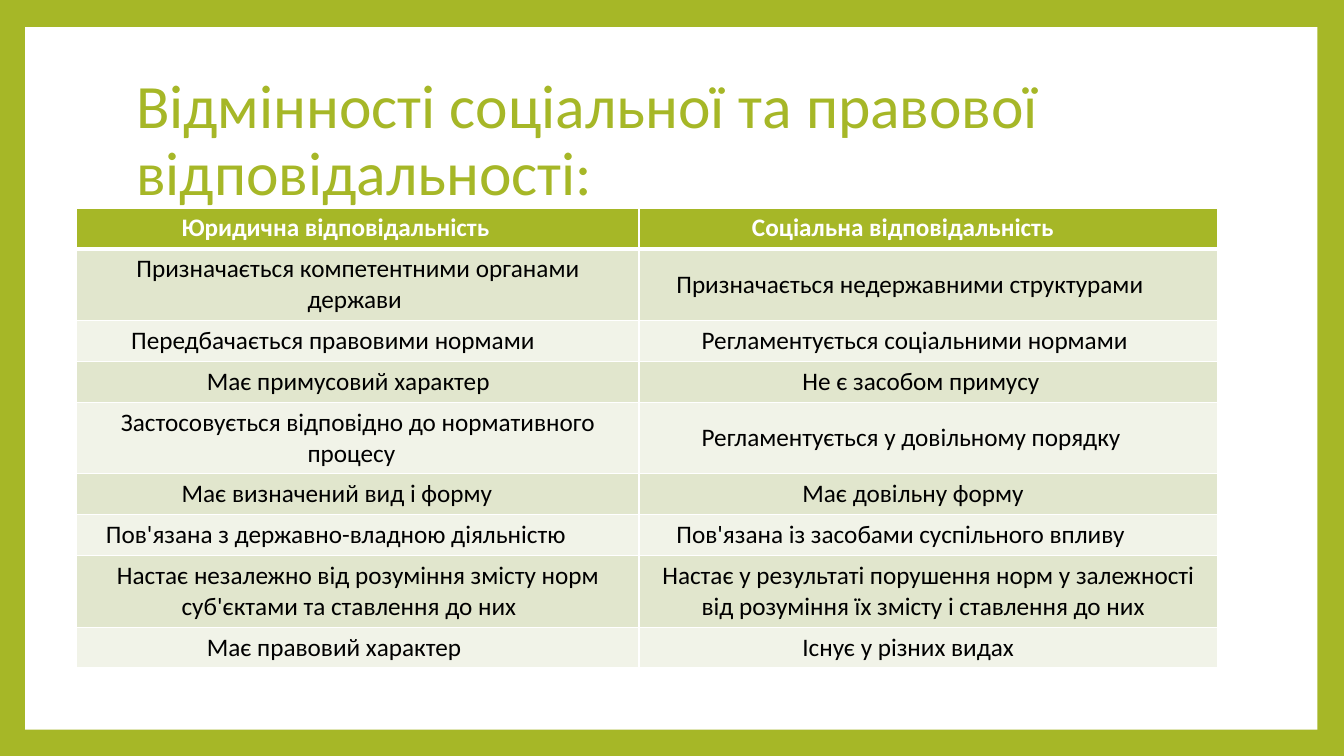
from lxml import etree
from pptx import Presentation
from pptx.dml.color import RGBColor
from pptx.enum import shapes, text
from pptx.oxml.ns import qn
from pptx.util import Pt

TITLE = "Відмінності соціальної та правової відповідальності:"
ROWS = [
    ("Юридична відповідальність", "Соціальна відповідальність"),
    ("Призначається компетентними органами держави",
     "Призначається недержавними структурами"),
    ("Передбачається правовими нормами", "Регламентується соціальними нормами"),
    ("Має примусовий характер", "Не є засобом примусу"),
    ("Застосовується відповідно до нормативного процесу",
     "Регламентується у довільному порядку"),
    ("Maє визначений вид і форму", "Має довільну форму"),
    ("Пов'язана з державно-владною діяльністю",
     "Пов'язана із засобами суспільного впливу"),
    ("Настає незалежно від розуміння змісту норм суб'єктами та ставлення до них",
     "Настає у результаті порушення норм у залежності від розуміння їх змісту "
     "і ставлення до них"),
    ("Має правовий характер", "Існує у різних видах"),
]
COLORS = {"green": "A6B727", "white": "FFFFFF", "black": "000000",
          "odd": "E1E6CD", "even": "F1F3E8"}
PANEL = (18, 19.4, 923, 501.8)
HEAD = (90, 48.2, 777.6, 106.6)
GRID = (54.9, 148.5)
COLS = (401.6, 413.3)
ROW_H = 29.2
FONT = "Calibri"


def color(name):
    return RGBColor.from_string(COLORS[name])


def paint(fill, name):
    fill.solid()
    fill.fore_color.rgb = color(name)


def style(font, size, name, bold=False):
    for key, val in {"name": FONT, "size": Pt(size), "bold": bold}.items():
        setattr(font, key, val)
    font.color.rgb = color(name)


def edge(cell, top, bottom):
    """Give the cell white borders, 1 pt at the sides."""
    props = cell._tc.get_or_add_tcPr()
    sides = {"lnL": 1, "lnR": 1, "lnT": top, "lnB": bottom}
    for i, (tag, width) in enumerate(sides.items()):
        line = etree.Element(qn("a:" + tag), w=str(Pt(width)))
        solid = etree.SubElement(line, qn("a:solidFill"))
        etree.SubElement(solid, qn("a:srgbClr"), val=COLORS["white"])
        props.insert(i, line)


def add_panel(slide):
    panel = slide.shapes.add_shape(shapes.MSO_SHAPE.RECTANGLE, *map(Pt, PANEL))
    panel.shadow.inherit = False
    paint(panel.fill, "white")
    panel.line.fill.background()
    slide.shapes._spTree.insert(2, panel._element)  # behind the title


def add_title(slide):
    title = slide.shapes.title
    for key, val in zip(("left", "top", "width", "height"), HEAD):
        setattr(title, key, Pt(val))
    frame = title.text_frame
    frame.text = TITLE
    frame.word_wrap = True
    frame.vertical_anchor = text.MSO_ANCHOR.MIDDLE
    para = frame.paragraphs[0]
    para.alignment = text.PP_ALIGN.LEFT
    para.line_spacing = 0.9
    style(para.runs[0].font, 44, "green")


def add_grid(slide):
    size = (sum(COLS), ROW_H * len(ROWS))
    table = slide.shapes.add_table(len(ROWS), len(COLS),
                                   *map(Pt, GRID + size)).table
    for col, width in zip(table.columns, COLS):
        col.width = Pt(width)
    for r, row in enumerate(ROWS):
        table.rows[r].height = Pt(ROW_H)
        for c, words in enumerate(row):
            cell = table.cell(r, c)
            cell.vertical_anchor = text.MSO_ANCHOR.MIDDLE
            paint(cell.fill, "green" if r == 0 else "odd" if r % 2 else "even")
            edge(cell, 3 if r == 1 else 1, 3 if r == 0 else 1)
            para = cell.text_frame.paragraphs[0]
            para.alignment = text.PP_ALIGN.CENTER
            run = para.add_run()
            run.text = words + " \t"  # the tab shifts the centred line
            style(run.font, 18, "black" if r else "white", r == 0)


def main():
    deck = Presentation()
    deck.slide_width, deck.slide_height = Pt(960), Pt(540)
    slide = deck.slides.add_slide(deck.slide_layouts[5])
    paint(slide.background.fill, "green")
    add_panel(slide)
    add_title(slide)
    add_grid(slide)
    deck.save("out.pptx")


if __name__ == "__main__":
    main()
